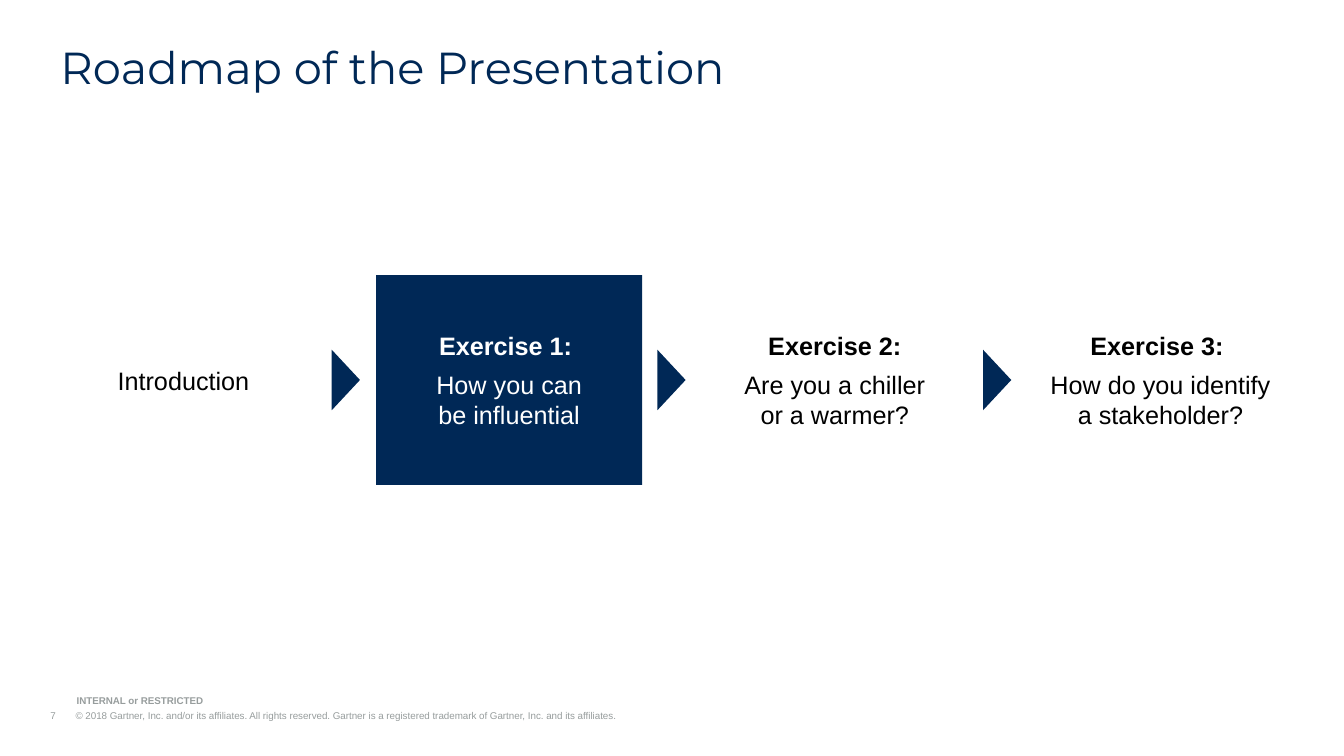
import pptx
import pptx.util
import pptx.dml.color
import pptx.enum.shapes
import pptx.enum.text
import pptx.oxml.ns
import lxml.etree

COLORS = {"navy": "002856", "white": "FFFFFF", "black": "000000", "gray": "979D9D"}
SHAPE = pptx.enum.shapes.MSO_SHAPE
ANCHOR = pptx.enum.text.MSO_ANCHOR
ALIGN = pptx.enum.text.PP_ALIGN
SCALE = 9144


def px(value):
    return pptx.util.Emu(value * SCALE)


class Deck:
    def __init__(self, width, height):
        self.prs = pptx.Presentation()
        self.prs.slide_width = px(width)
        self.prs.slide_height = px(height)
        self.slide = self.prs.slides.add_slide(self.prs.slide_layouts[5])
        self.shapes = self.slide.shapes

    def color(self, name):
        return pptx.dml.color.RGBColor.from_string(COLORS[name])

    def words(self, para, text, size, color, bold=False, font="Arial"):
        for i, line in enumerate(text.split("\n")):
            if i:
                para.add_line_break()
            run = para.add_run()
            run.text = line
            run.font.name = font
            run.font.size = pptx.util.Pt(size)
            run.font.bold = bold
            run.font.color.rgb = self.color(color)

    def title(self, text, x, y, w, h):
        shape = self.shapes.title
        shape.left, shape.top, shape.width, shape.height = map(px, (x, y, w, h))
        frame = shape.text_frame
        frame.auto_size = pptx.enum.text.MSO_AUTO_SIZE.NONE
        frame.vertical_anchor = ANCHOR.TOP
        para = frame.paragraphs[0]
        para.alignment = ALIGN.LEFT
        para.line_spacing = 0.9
        self.words(para, text, 32, "navy", font="Montserrat")

    def solid(self, kind, x, y, w, h):
        shape = self.shapes.add_shape(kind, px(x), px(y), px(w), px(h))
        shape.shadow.inherit = False
        shape.fill.solid()
        shape.fill.fore_color.rgb = self.color("navy")
        shape.line.fill.background()
        return shape

    def step(self, head, body, x, y, w, h, active):
        if active:
            shape = self.solid(SHAPE.RECTANGLE, x, y, w, h)
        else:
            shape = self.shapes.add_textbox(px(x), px(y), px(w), px(h))
        frame = shape.text_frame
        frame.word_wrap = True
        frame.vertical_anchor = ANCHOR.MIDDLE
        color = "white" if active else "black"
        para = frame.paragraphs[0]
        if head:
            para.alignment = ALIGN.CENTER
            para.space_after = pptx.util.Pt(6)
            self.words(para, head, 18, color, True)
            para = frame.add_paragraph()
        para.alignment = ALIGN.CENTER
        para.space_after = pptx.util.Pt(12)
        self.words(para, body, 18, color)

    def arrow(self, x, y, w, h):
        self.solid(SHAPE.ISOSCELES_TRIANGLE, x, y, w, h).rotation = 90

    def note(self, text, x, y, w, h, bold=False, tab=0):
        frame = self.shapes.add_textbox(px(x), px(y), px(w), px(h)).text_frame
        frame.margin_left = frame.margin_right = 0
        frame.margin_top = frame.margin_bottom = 0
        frame.word_wrap = True
        frame.vertical_anchor = ANCHOR.BOTTOM
        para = frame.paragraphs[0]
        if tab:
            qn = pptx.oxml.ns.qn
            props = para._p.get_or_add_pPr()
            props.set("marL", str(px(tab)))
            props.set("indent", str(-px(tab)))
            tabs = lxml.etree.SubElement(props, qn("a:tabLst"))
            lxml.etree.SubElement(tabs, qn("a:tab"), pos=str(px(tab)), algn="l")
        self.words(para, text, 7, "gray", bold)


def main():
    deck = Deck(1333, 750)
    deck.title("Roadmap of the Presentation", 50, 40, 1233, 48)
    deck.note(
        "7\t© 2018 Gartner, Inc. and/or its affiliates. All rights reserved. "
        "Gartner is a registered trademark of Gartner, Inc. and its affiliates.",
        50, 704, 799, 12, tab=25)
    deck.note("INTERNAL or RESTRICTED", 76, 689, 253, 12, bold=True)

    steps = [
        ("", "Introduction"),
        ("Exercise 1: ", "How you can\nbe influential"),
        ("Exercise 2:", "Are you a chiller\nor a warmer?"),
        ("Exercise 3: ", "How do you identify\na stakeholder?"),
    ]
    left, pitch, active = 50, 323, 1
    for i, (head, body) in enumerate(steps):
        x = left + i * pitch
        deck.step(head, body, x, 273, 264, 208, i == active)
        if i:
            deck.arrow(x - 60, 363, 60, 28)

    deck.prs.save("out.pptx")


if __name__ == "__main__":
    main()
